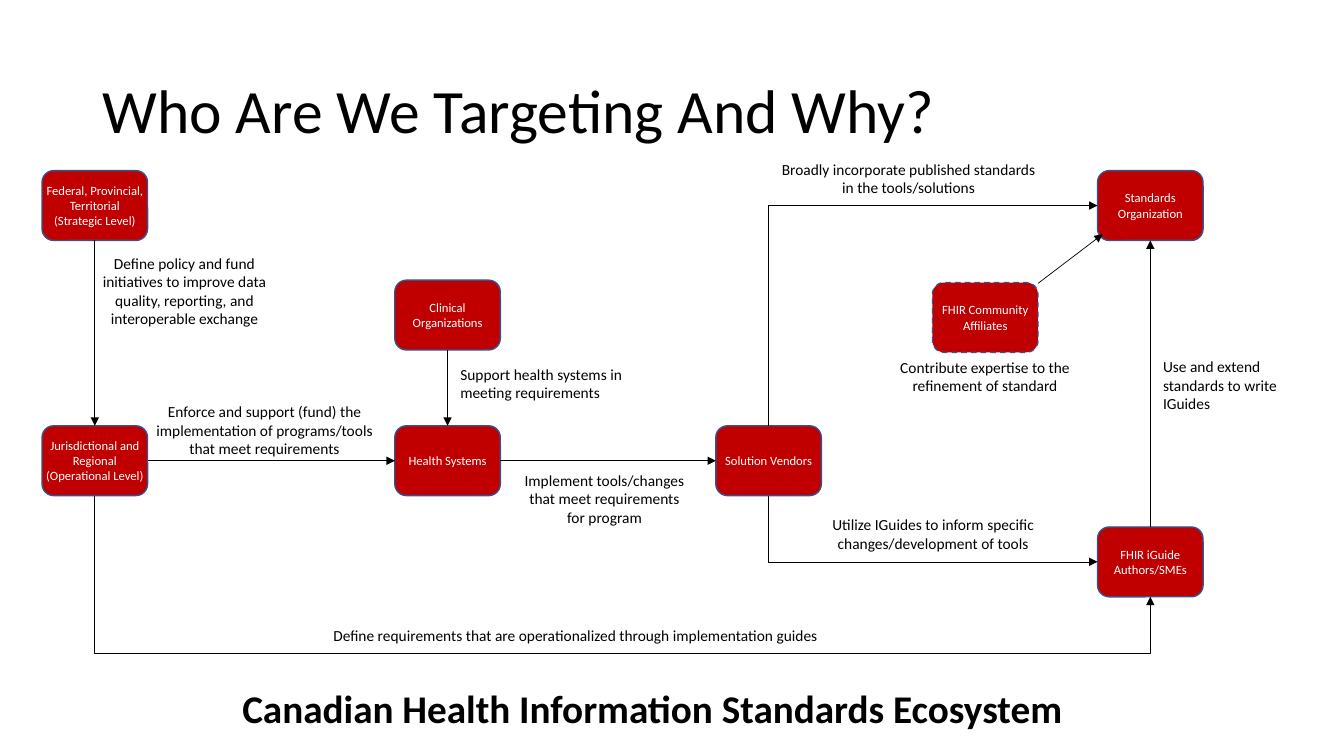
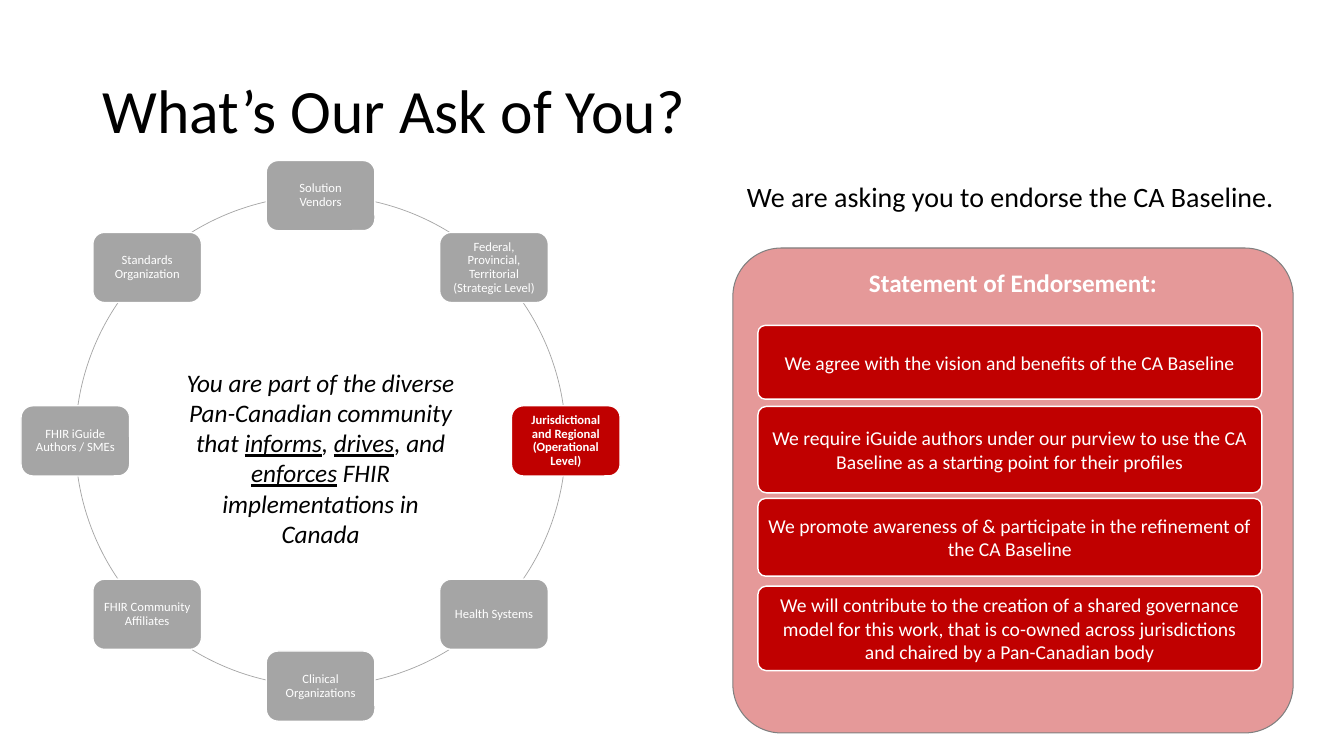
import math
from dataclasses import dataclass

import lxml.etree
import pptx
import pptx.dml.color
import pptx.enum.dml
import pptx.enum.shapes
import pptx.enum.text
import pptx.oxml.ns
import pptx.util

Cm = pptx.util.Cm
Pt = pptx.util.Pt
qn = pptx.oxml.ns.qn
SHAPE = pptx.enum.shapes.MSO_SHAPE
CONNECTOR = pptx.enum.shapes.MSO_CONNECTOR
ALIGN = pptx.enum.text.PP_ALIGN
ANCHOR = pptx.enum.text.MSO_ANCHOR
TOP, LEFT, BOTTOM, RIGHT = range(4)


@dataclass(frozen=True)
class Theme:
    font: str = "Calibri"
    black: str = "000000"
    white: str = "FFFFFF"
    red: str = "C00000"
    grey: str = "A5A5A5"
    box_line: str = "325491"
    panel_line: str = "808080"
    title_size: float = 44
    banner_size: float = 28
    lead_size: float = 20
    body_size: float = 18
    statement_size: float = 14
    label_size: float = 11
    box_size: float = 9
    thin: float = 0.5
    medium: float = 0.75
    outline: float = 1


THEME = Theme()

# Actors of the ecosystem: text, left, top (cm), dashed outline
BOX_SIZE = (2.66, 1.76)
BOXES = {
    "federal": ("Federal, Provincial, Territorial (Strategic Level)", 1.06, 4.3, False),
    "regional": ("Jurisdictional and Regional (Operational Level)", 1.06, 10.73, False),
    "clinical": ("Clinical Organizations", 9.95, 7.06, False),
    "health": ("Health Systems", 9.95, 10.73, False),
    "vendors": ("Solution Vendors", 18.04, 10.73, False),
    "affiliates": ("FHIR Community Affiliates", 23.5, 7.12, True),
    "standards": ("Standards Organization", 27.66, 4.3, False),
    "authors": ("FHIR iGuide Authors/SMEs", 27.66, 13.28, False),
}

# Text, left, top, width, height (cm), alignment
LABELS = [
    ("Define policy and fund initiatives to improve data quality, reporting, "
     "and interoperable exchange", 2.06, 6.27, 5.18, 2.13, ALIGN.CENTER),
    ("Use and extend standards to write IGuides", 29.06, 8.87, 4.02, 1.68, ALIGN.LEFT),
    ("Define requirements that are operationalized through implementation guides",
     8.15, 15.65, 13.11, 0.74, ALIGN.LEFT),
    ("Enforce and support (fund) the implementation of programs/tools that meet "
     "requirements", 3.48, 10.01, 6.38, 1.68, ALIGN.CENTER),
    ("Implement tools/changes that meet requirements for program",
     12.9, 11.74, 4.67, 1.68, ALIGN.CENTER),
    ("Broadly incorporate published standards in the tools/solutions",
     19.35, 3.9, 7.1, 1.2, ALIGN.CENTER),
    ("Utilize IGuides to inform specific changes/development of tools",
     19.38, 12.86, 8.28, 1.2, ALIGN.CENTER),
    ("Support health systems in meeting requirements", 11.35, 9.07, 4.98, 1.2, ALIGN.LEFT),
    ("Contribute expertise to the refinement of standard",
     22.12, 8.89, 5.41, 1.2, ALIGN.CENTER),
]

STRAIGHT_ARROWS = [
    ("federal", BOTTOM, "regional", TOP),
    ("clinical", BOTTOM, "health", TOP),
    ("regional", RIGHT, "health", LEFT),
    ("health", RIGHT, "vendors", LEFT),
    ("authors", TOP, "standards", BOTTOM),
]

# Clockwise from the top
CYCLE = [
    "Solution Vendors",
    "Federal, Provincial, Territorial (Strategic Level)",
    "Jurisdictional and Regional (Operational Level)",
    "Health Systems",
    "Clinical Organizations",
    "FHIR Community Affiliates",
    "FHIR iGuide Authors / SMEs",
    "Standards Organization",
]
HIGHLIGHTED = 2

# Text, top, height (cm)
STATEMENTS = [
    ("We agree with the vision and benefits of the CA Baseline", 8.2, 1.86),
    ("We require iGuide authors under our purview to use the CA Baseline as a "
     "starting point for their profiles", 10.24, 2.18),
    ("We promote awareness of & participate in the refinement of the CA Baseline",
     12.56, 1.96),
    ("We will contribute to the creation of a shared governance model for this work, "
     "that is co-owned across jurisdictions and chaired by a Pan-Canadian body",
     14.77, 2.13),
]


def rgb(colour):
    return pptx.dml.color.RGBColor.from_string(colour)


def assign(target, values):
    for name, value in values.items():
        setattr(target, name, value)


def write_text(shape, text, size, colour=THEME.black, align=ALIGN.CENTER,
               anchor=ANCHOR.MIDDLE, insets=(0.25, 0.13), spacing=1.0, **font):
    """Fill the shape with one paragraph; text is a string or (string, font values) runs."""
    across, down = map(Cm, insets)
    frame = shape.text_frame
    assign(frame, {"word_wrap": True, "auto_size": pptx.enum.text.MSO_AUTO_SIZE.NONE,
                   "vertical_anchor": anchor, "margin_left": across,
                   "margin_right": across, "margin_top": down, "margin_bottom": down})
    paragraph = frame.paragraphs[0]
    assign(paragraph, {"alignment": align, "line_spacing": spacing})
    for words, extra in [(text, {})] if isinstance(text, str) else text:
        run = paragraph.add_run()
        run.text = words
        assign(run.font, {"name": THEME.font, "size": Pt(size), **font, **extra})
        run.font.color.rgb = rgb(colour)


def add_titled_slide(presentation, title):
    slide = presentation.slides.add_slide(presentation.slide_layouts[5])
    placeholder = slide.shapes.title
    assign(placeholder, {"left": Cm(2.33), "top": Cm(1.02),
                         "width": Cm(29.21), "height": Cm(3.68)})
    write_text(placeholder, title, THEME.title_size, align=ALIGN.LEFT, spacing=0.9)
    return slide


def add_text(slide, text, bounds, size, **options):
    text_box = slide.shapes.add_textbox(*map(Cm, bounds))
    write_text(text_box, text, size, **options)


def add_figure(slide, kind, bounds, fill, line, width, rounding=None):
    shape = slide.shapes.add_shape(kind, *map(Cm, bounds))
    shape.shadow.inherit = False
    if fill is None:
        shape.fill.background()
    else:
        shape.fill.solid()
        shape.fill.fore_color.rgb = rgb(fill)
    shape.line.color.rgb = rgb(line)
    shape.line.width = Pt(width)
    if rounding is not None:
        shape.adjustments[0] = rounding
    return shape


def set_opacity(shape, percent):
    colour = shape.fill._xPr.find(qn("a:solidFill"))[0]
    lxml.etree.SubElement(colour, qn("a:alpha"), val=str(percent * 1000))


def add_arrow(slide, kind=CONNECTOR.STRAIGHT, points=(0, 0, 0, 0), begin=None, end=None,
              arrow_end="a:tailEnd"):
    """Draw an arrow between points, or between (shape, side) pairs that it is joined to."""
    connector = slide.shapes.add_connector(kind, *map(Cm, points))
    if begin:
        connector.begin_connect(*begin)
        connector.end_connect(*end)
    connector.line.color.rgb = rgb(THEME.black)
    connector.line.width = Pt(THEME.thin)
    properties = connector._element.spPr
    lxml.etree.SubElement(properties.find(qn("a:ln")), qn(arrow_end), type="triangle")
    lxml.etree.SubElement(properties, qn("a:effectLst"))
    return connector


def add_corner_arrow(slide, source, target):
    """Arrow with one bend; it is drawn from the target, so its head is at the start."""
    connector = add_arrow(slide, CONNECTOR.ELBOW, begin=target, end=source,
                          arrow_end="a:headEnd")
    connector._element.spPr.find(qn("a:prstGeom")).set("prst", "bentConnector2")


def add_under_arrow(slide, source, target, drop):
    """Arrow from the bottom of source to the bottom of target, running drop cm below it."""
    connector = add_arrow(slide, CONNECTOR.ELBOW, begin=(source, BOTTOM), end=(target, BOTTOM))
    across, down = connector.width, connector.height
    middle_x = connector.left + across // 2
    middle_y = connector.top + down // 2
    assign(connector, {"left": middle_x - down // 2, "top": middle_y - across // 2,
                       "width": down, "height": across})
    properties = connector._element.spPr
    transform = properties.find(qn("a:xfrm"))
    transform.set("rot", str(270 * 60000))
    transform.set("flipH", "1")
    geometry = properties.find(qn("a:prstGeom"))
    adjustments = geometry.find(qn("a:avLst"))
    if adjustments is None:
        adjustments = lxml.etree.SubElement(geometry, qn("a:avLst"))
    reach = round((down + Cm(drop)) / down * 100000)
    lxml.etree.SubElement(adjustments, qn("a:gd"), name="adj1", fmla=f"val {reach}")


def add_actor(slide, text, left, top, dashed):
    box = add_figure(slide, SHAPE.ROUNDED_RECTANGLE, (left, top, *BOX_SIZE),
                     THEME.red, THEME.box_line, THEME.outline)
    if dashed:
        box.line.dash_style = pptx.enum.dml.MSO_LINE.DASH
    write_text(box, text, THEME.box_size, THEME.white, insets=(0, 0.13))
    return box


def build_ecosystem(presentation):
    slide = add_titled_slide(presentation, "Who Are We Targeting And Why?")
    actors = {name: add_actor(slide, *values) for name, values in BOXES.items()}
    for text, *bounds, align in LABELS:
        add_text(slide, text, bounds, THEME.label_size, align=align, anchor=ANCHOR.TOP)
    for source, source_side, target, target_side in STRAIGHT_ARROWS:
        add_arrow(slide, begin=(actors[source], source_side),
                  end=(actors[target], target_side))
    add_arrow(slide, points=(26.16, 7.14, 27.79, 5.9))
    for side, target in ((TOP, "standards"), (BOTTOM, "authors")):
        add_corner_arrow(slide, (actors["vendors"], side), (actors[target], LEFT))
    add_under_arrow(slide, actors["regional"], actors["authors"], 1.42)
    add_text(slide, "Canadian Health Information Standards Ecosystem",
             (5.08, 17.12, 22.71, 1.45), THEME.banner_size, anchor=ANCHOR.TOP, bold=True)


def add_cycle(slide, centre_x, centre_y, radius, width, height):
    add_figure(slide, SHAPE.OVAL, (centre_x - radius, centre_y - radius, 2 * radius, 2 * radius),
               None, THEME.grey, THEME.thin)
    for index, text in enumerate(CYCLE):
        angle = 2 * math.pi * index / len(CYCLE)
        left = centre_x + radius * math.sin(angle) - width / 2
        top = centre_y - radius * math.cos(angle) - height / 2
        highlighted = index == HIGHLIGHTED
        node = add_figure(slide, SHAPE.ROUNDED_RECTANGLE, (left, top, width, height),
                          THEME.red if highlighted else THEME.grey, THEME.white, THEME.outline)
        write_text(node, text, THEME.box_size, THEME.white, insets=(0.19, 0.19),
                   spacing=0.9, bold=highlighted)


def build_ask(presentation):
    slide = add_titled_slide(presentation, "What’s Our Ask of You?")
    add_cycle(slide, 8.08, 11.11, 6.18, 2.74, 1.77)
    underlined = {"underline": True}
    message = [("You are part of the diverse Pan-Canadian community that ", {}),
               ("informs", underlined), (", ", {}), ("drives", underlined),
               (", and ", {}), ("enforces", underlined),
               (" FHIR implementations in Canada", {})]
    add_text(slide, message, (4.42, 9.12, 7.32, 4.88), THEME.body_size,
             anchor=ANCHOR.TOP, italic=True)

    panel = add_figure(slide, SHAPE.ROUNDED_RECTANGLE, (18.47, 6.25, 14.12, 12.22),
                       THEME.red, THEME.panel_line, THEME.medium, rounding=0.1)
    set_opacity(panel, 40)
    heading = {"insets": (0.38, 0.38), "spacing": 0.9}
    add_text(slide, "Statement of Endorsement:", (18.47, 6.25, 14.12, 1.83),
             THEME.body_size, colour=THEME.white, bold=True, **heading)
    for text, top, height in STATEMENTS:
        statement = add_figure(slide, SHAPE.ROUNDED_RECTANGLE, (19.1, top, 12.7, height),
                               THEME.red, THEME.white, THEME.outline, rounding=0.1)
        write_text(statement, text, THEME.statement_size, THEME.white, insets=(0.15, 0.05))
    add_text(slide, "We are asking you to endorse the CA Baseline.",
             (18.4, 4.09, 14.12, 1.83), THEME.lead_size, **heading)


def main():
    presentation = pptx.Presentation()
    assign(presentation, {"slide_width": Cm(33.87), "slide_height": Cm(19.05)})
    build_ecosystem(presentation)
    build_ask(presentation)
    presentation.save("out.pptx")


if __name__ == "__main__":
    main()
